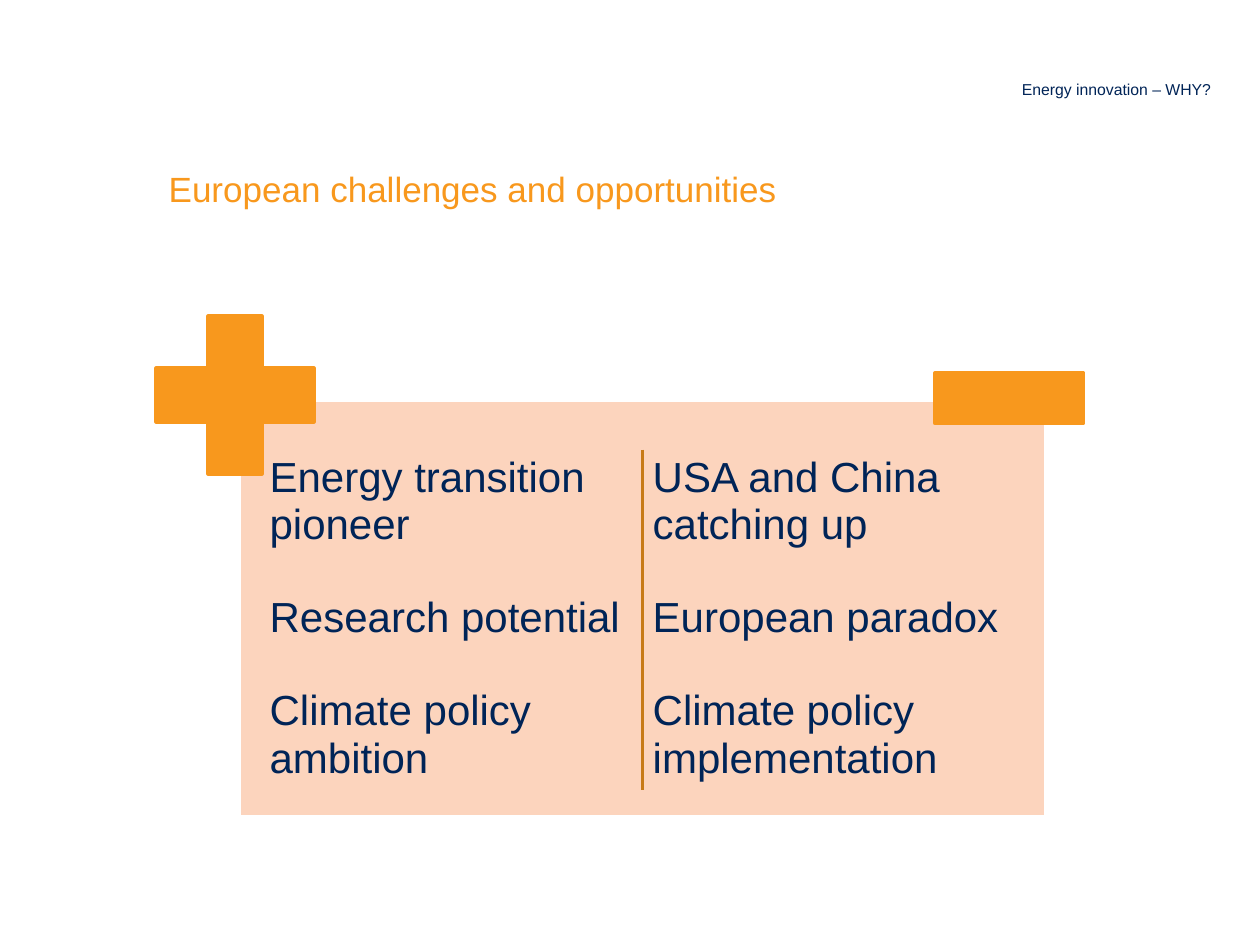
from lxml.etree import SubElement
from pptx import Presentation
from pptx.dml.color import RGBColor
from pptx.enum.shapes import MSO_CONNECTOR as Connector, MSO_SHAPE as Shape
from pptx.enum.text import MSO_ANCHOR as Anchor, PP_ALIGN as Align
from pptx.oxml.ns import qn
from pptx.util import Pt

NAVY = RGBColor(0x00, 0x24, 0x57)
ORANGE = RGBColor(0xF8, 0x98, 0x1D)
BROWN = RGBColor(0xC7, 0x7A, 0x17)
PEACH = RGBColor(0xFC, 0xD4, 0xBD)
WHITE = RGBColor(0xFF, 0xFF, 0xFF)

STRENGTHS = ["Energy transition pioneer", "Research potential",
             "Climate policy ambition"]
CHALLENGES = ["USA and China catching up", "European paradox",
              "Climate policy implementation"]


def add_text(page, bounds, lines, size, color, insets=(7.2, 3.6, 7.2, 3.6),
             align=Align.LEFT, anchor=Anchor.TOP, spacing=1.0, gap=0):
    """Add a text box with one paragraph per line; gap separates them."""
    box = page.shapes.add_textbox(*map(Pt, bounds))
    frame = box.text_frame
    frame.word_wrap = True
    frame.vertical_anchor = anchor
    (frame.margin_left, frame.margin_top,
     frame.margin_right, frame.margin_bottom) = map(Pt, insets)
    frame.text = "\n".join(lines)
    for index, para in enumerate(frame.paragraphs):
        para.alignment = align
        para.line_spacing = spacing
        para.space_before = Pt(gap if index else 0)
        for span in para.runs:
            span.font.name = "Arial"
            span.font.size = Pt(size)
            span.font.color.rgb = color


def add_block(page, kind, bounds, fill, line):
    """Add a filled preset shape with a 2 pt outline."""
    block = page.shapes.add_shape(kind, *map(Pt, bounds))
    block.shadow.inherit = False
    block.fill.solid()
    block.fill.fore_color.rgb = fill
    block.line.color.rgb = line
    block.line.width = Pt(2)
    return block


def add_divider(page, x, top, bottom):
    """Add a vertical line without a shadow."""
    divider = page.shapes.add_connector(
        Connector.STRAIGHT, Pt(x), Pt(top), Pt(x), Pt(bottom))
    divider.line.color.rgb = BROWN
    divider.line.width = Pt(2)
    SubElement(divider.element.spPr, qn("a:effectLst"))


def main():
    deck = Presentation()
    deck.slide_width, deck.slide_height = Pt(720), Pt(540)
    page = deck.slides.add_slide(deck.slide_layouts[6])

    # Headings
    add_text(page, (89.3, 87.1, 529.2, 36.7),
             ["European challenges and opportunities"], 20, ORANGE,
             insets=(7.2, 8.64, 7.2, 3.6))
    add_text(page, (127.4, 20.2, 571.7, 39.6), ["Energy innovation – WHY?"],
             9, NAVY, align=Align.RIGHT, anchor=Anchor.BOTTOM)

    # Panel with the two columns
    add_block(page, Shape.RECTANGLE, (136.8, 228.7, 460.8, 238.3),
              PEACH, WHITE)
    for left, lines in ((150.5, STRENGTHS), (369.4, CHALLENGES)):
        add_text(page, (left, 256.3, 213.8, 203.8), lines, 24, NAVY,
                 insets=(3.6,) * 4, spacing=0.94, gap=26)

    # Plus and minus signs
    plus = add_block(page, Shape.CROSS, (89.3, 180.7, 90, 90), ORANGE, ORANGE)
    plus.adjustments[0] = 0.33
    add_block(page, Shape.RECTANGLE, (534.2, 213.1, 85, 28.8), ORANGE, ORANGE)

    # Line between the columns
    add_divider(page, 367.2, 257, 451.4)

    deck.save("out.pptx")


if __name__ == "__main__":
    main()
